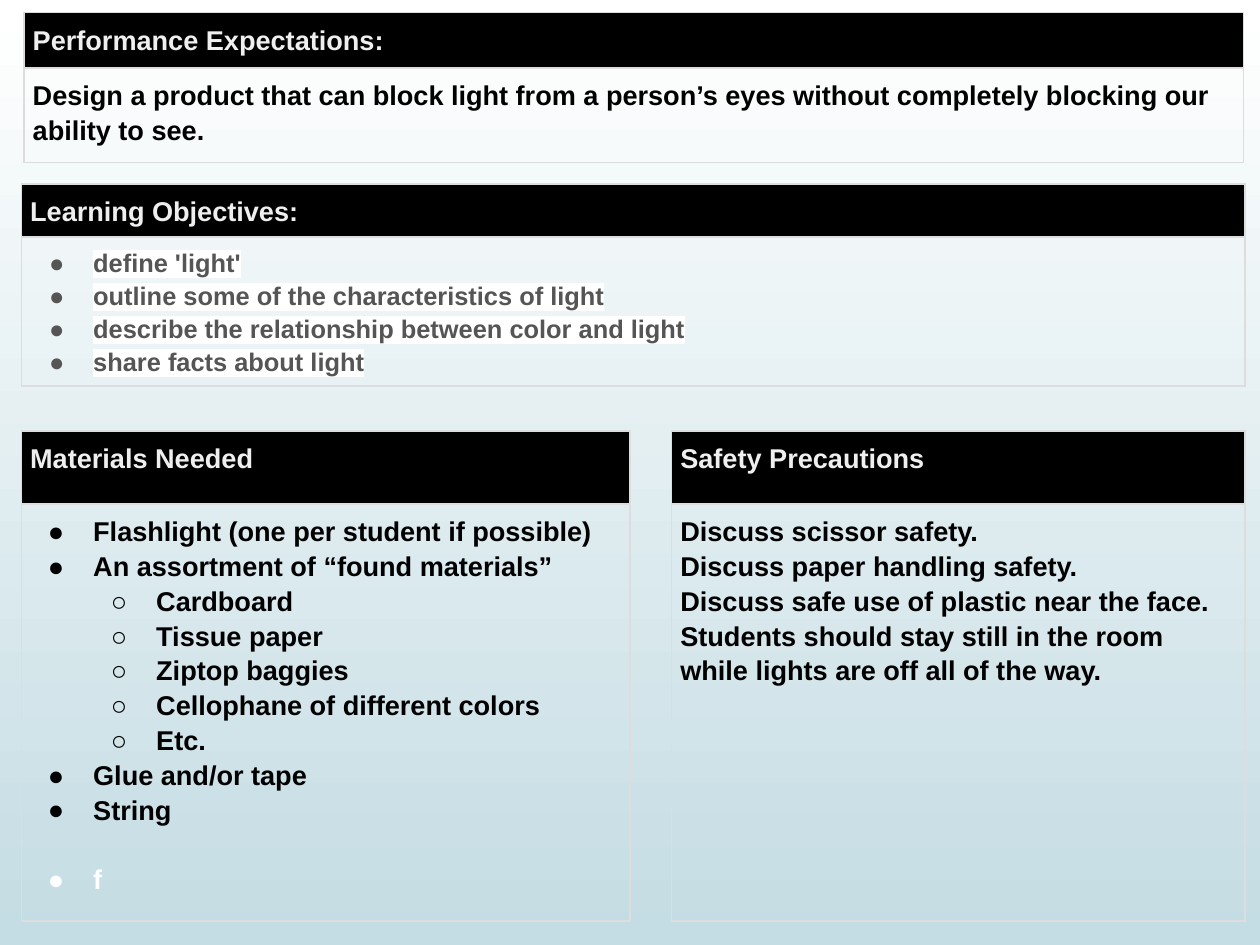
from lxml.etree import SubElement
from pptx import Presentation
from pptx.dml.color import RGBColor as Rgb
from pptx.oxml.ns import qn
from pptx.util import Inches, Pt

COLORS = {
    "sky": "FFFFFF", "ground": "C4DCE3", "border": "DDDDDD", "heading": "EFEFEF",
    "black": "000000", "gray": "555555", "white": "FFFFFF",
}
WIDTH, HEIGHT = 10, 7.5
COLUMNS, ROWS = 100, 75
BULLETS = "●○"


def color(name):
    return Rgb.from_string(COLORS[name])


def add_solid(parent, tag, name):
    SubElement(SubElement(parent, qn(tag)), qn("a:srgbClr"), val=COLORS[name])


class LessonSlide:
    """Lesson-plan slide whose panels are placed on a grid of columns and rows."""

    font, size, margin, spacing = "Arial", 15.5, 0.07, 1.15

    def __init__(self, deck):
        deck.slide_width, deck.slide_height = Inches(WIDTH), Inches(HEIGHT)
        self.slide = deck.slides.add_slide(deck.slide_layouts[6])

    def x(self, columns):
        return Inches(WIDTH * columns / COLUMNS)

    def y(self, rows):
        return Inches(HEIGHT * rows / ROWS)

    def background(self, top, bottom):
        fill = self.slide.background.fill
        fill.gradient()
        fill.gradient_angle = 270
        for stop, name in zip(fill.gradient_stops, (top, bottom)):
            stop.color.rgb = color(name)

    def panel(self, left, top, width, heights, title, lines, **style):
        frame = self.slide.shapes.add_table(
            2, 1, self.x(left), self.y(top), self.x(width), self.y(sum(heights)))
        table = frame.table
        table.first_row = table.horz_banding = False
        for row, height in zip(table.rows, heights):
            row.height = self.y(height)
        heading, body = table.cell(0, 0), table.cell(1, 0)
        for cell in (heading, body):
            self.border(cell)
            cell.margin_left = cell.margin_right = Inches(self.margin)
            cell.margin_top = cell.margin_bottom = Inches(self.margin)
        heading.fill.solid()
        heading.fill.fore_color.rgb = color("black")
        body.fill.background()
        self.line(heading.text_frame.paragraphs[0], title, ink="heading")
        for index, entry in enumerate(lines):
            text, changes = entry if isinstance(entry, tuple) else (entry, {})
            frame = body.text_frame
            paragraph = frame.add_paragraph() if index else frame.paragraphs[0]
            self.line(paragraph, text, **{**style, **changes})

    def border(self, cell):
        properties = cell._tc.get_or_add_tcPr()
        for side in "LRTB":
            edge = SubElement(properties, qn(f"a:ln{side}"), w=str(Pt(1)))
            add_solid(edge, "a:solidFill", "border")

    def line(self, paragraph, text, ink="black", size=size, level=None,
             hang=0.36, highlight=None, gap=0):
        if level is not None:
            self.bullet(paragraph, level, hang, ink)
        paragraph.line_spacing = self.spacing
        if gap:
            paragraph.space_before = Pt(gap)
        run = paragraph.add_run()
        run.text = text
        run.font.name, run.font.size, run.font.bold = self.font, Pt(size), True
        run.font.color.rgb = color(ink)
        if highlight:
            properties = run._r.get_or_add_rPr()
            add_solid(properties, "a:highlight", highlight)
            properties.find(qn("a:solidFill")).addnext(properties[-1])

    def bullet(self, paragraph, level, hang, ink):
        paragraph.level = level
        properties = paragraph._p.get_or_add_pPr()
        properties.set("marL", str(Inches(0.5 * (level + 1))))
        properties.set("indent", str(-Inches(hang)))
        add_solid(properties, "a:buClr", ink)
        SubElement(properties, qn("a:buFont"), typeface=self.font)
        SubElement(properties, qn("a:buChar"), char=BULLETS[level])


def main():
    deck = Presentation()
    lesson = LessonSlide(deck)
    lesson.background("sky", "ground")
    lesson.panel(1.9, 1, 96.8, (4.4, 7.5), "Performance Expectations:", [
        "Design a product that can block light from a person’s eyes "
        "without completely blocking our ability to see.",
    ])
    lesson.panel(1.7, 14.6, 97.1, (4.2, 11.8), "Learning Objectives:", [
        "define 'light'",
        "outline some of the characteristics of light",
        "describe the relationship between color and light",
        "share facts about light",
    ], ink="gray", size=14.5, level=0, hang=0.35, highlight="white")
    found_materials = ["Cardboard", "Tissue paper", "Ziptop baggies",
                       "Cellophane of different colors", "Etc."]
    lower_top, lower_heights = 34.2, (5.8, 33.1)
    lesson.panel(1.7, lower_top, 48.3, lower_heights, "Materials Needed", [
        "Flashlight (one per student if possible)",
        "An assortment of “found materials”",
        *[(material, {"level": 1}) for material in found_materials],
        "Glue and/or tape",
        "String",
        ("f", {"ink": "white", "gap": 20}),
    ], level=0)
    lesson.panel(53.3, lower_top, 45.5, lower_heights, "Safety Precautions", [
        "Discuss scissor safety.",
        "Discuss paper handling safety.",
        "Discuss safe use of plastic near the face.",
        "Students should stay still in the room while lights are off all of the way.",
    ])
    deck.save("out.pptx")


if __name__ == "__main__":
    main()
